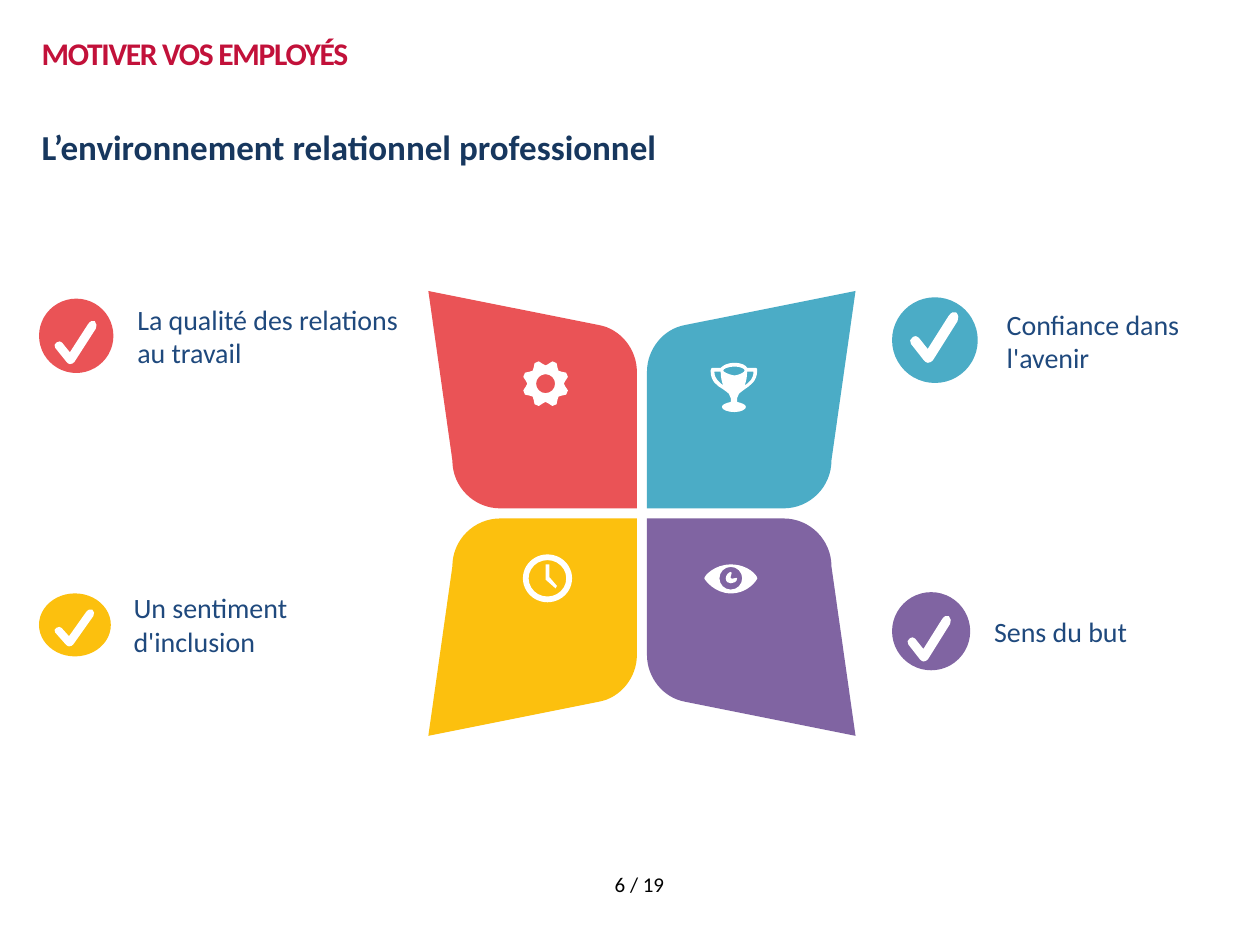
from math import cos, radians, sin

from lxml.etree import SubElement
from pptx import Presentation
from pptx.dml.color import RGBColor
from pptx.enum.shapes import MSO_SHAPE
from pptx.enum.text import MSO_ANCHOR, MSO_AUTO_SIZE, PP_ALIGN
from pptx.oxml.ns import qn
from pptx.util import Inches, Pt

COLORS = {
    "red": "EA5356", "teal": "4BACC6", "gold": "FCC00E", "plum": "8064A2",
    "white": "FFFFFF", "black": "000000", "navy": "17375E", "blue": "1F497D",
    "title": "C2113A",
}

# Outlines: a pair is a corner, six numbers are a Bezier curve
PETAL = [[(30, 145), (165, 172), (146, 38), (146, 17, 129, 0, 108, 0), (0, 0),
          (0, 108), (0, 126, 13, 142, 30, 145)]]
CHECK = [[(14, 41), (13, 41, 12, 40, 11, 39), (1, 26), (0, 24, 0, 22, 2, 21),
          (4, 19, 6, 20, 7, 21), (14, 30), (30, 4), (32, 1, 34, 0, 36, 1),
          (38, 3, 38, 6, 37, 8), (18, 39), (17, 40, 16, 41, 14, 41)]]
CUP = [
    [(21, 28), (21, 25, 23, 24, 27, 21), (31, 18, 37, 15, 37, 6),
     (37, 5, 37, 4, 36, 4), (29, 4), (28, 2, 25, 0, 19, 0),
     (13, 0, 10, 2, 8, 4), (1, 4), (1, 4, 0, 5, 0, 6),
     (0, 15, 5, 18, 10, 21), (14, 24, 16, 25, 16, 28), (16, 31),
     (12, 32, 9, 33, 9, 35), (9, 37, 13, 39, 19, 39),
     (24, 39, 28, 37, 28, 35), (28, 33, 25, 32, 21, 31)],
    [(27, 18), (28, 15, 29, 12, 29, 7), (34, 7), (34, 13, 31, 15, 27, 18)],
    [(19, 3), (25, 3, 27, 5, 27, 6), (27, 7, 25, 9, 19, 10),
     (13, 9, 10, 7, 10, 6), (10, 5, 13, 3, 19, 3)],
    [(3, 7), (8, 7), (8, 12, 9, 15, 10, 18), (7, 15, 3, 13, 3, 7)],
]
EYE = [
    [(21, 0), (8, 0, 0, 9, 0, 11), (0, 12, 8, 23, 21, 23),
     (35, 23, 42, 12, 42, 11), (42, 9, 35, 0, 21, 0)],
    [(21, 20), (16, 20, 12, 16, 12, 11), (12, 6, 16, 2, 21, 2),
     (26, 2, 30, 6, 30, 11), (30, 16, 26, 20, 21, 20)],
    [(21, 11), (20, 10, 23, 6, 21, 6), (19, 6, 17, 9, 17, 11),
     (17, 14, 19, 15, 21, 15), (23, 15, 26, 14, 26, 11),
     (26, 10, 22, 12, 21, 11)],
]
HANDS = [[(3, 0), (0, 0), (0, 12), (8, 19), (9, 17), (3, 10)]]


def polar(start, *pairs):
    """One node of the gear, from pairs of angle and radius."""
    node = []
    for angle, reach in pairs:
        turn = radians(start + angle)
        node += [18 + reach * cos(turn), 17.5 + reach * sin(turn)]
    return tuple(node)


TOOTH = [[(6, 15), (10, 16.5), (17, 18.5)], [(28, 18.5)],
         [(35, 16.5), (39, 15), (45, 14.5)]]
GEAR = [
    [polar(0, (0, 14.5))] + [polar(a, *node) for a in range(0, 360, 45) for node in TOOTH],
    [polar(0, (0, 7.5))] + [polar(a, (28.9, 8.57), (61.1, 8.57), (90, 7.5))
                            for a in range(0, 360, 90)],
]


def color(name):
    return RGBColor.from_string(COLORS[name])


def paint(shape, fill):
    shape.shadow.inherit = False
    shape.fill.solid()
    shape.fill.fore_color.rgb = color(fill)
    shape.line.fill.background()
    return shape


def preset(slide, kind, box, fill):
    return paint(slide.shapes.add_shape(kind, *map(Inches, box)), fill)


def free(slide, box, parts, fill, grid=None):
    """Draw outlines in a box; grid is their size, by default in 1/100 inch."""
    left, top, wide, high = box
    cols, rows = grid or (wide * 100, high * 100)
    pen, nodes = None, []
    for part in parts:
        spots = [[(Inches(left + x * wide / cols), Inches(top + y * high / rows))
                  for x, y in zip(node[::2], node[1::2])] for node in part]
        ends = [spot[-1] for spot in spots]
        if pen is None:
            pen = slide.shapes.build_freeform(*ends[0], scale=1.0)
        else:
            pen.move_to(*ends[0])
        pen.add_line_segments(ends[1:], close=False)
        nodes += spots
    shape = paint(pen.convert_to_shape(), fill)
    # Bend the segments that are curves
    steps = [step for step in shape._element.iter(qn("a:moveTo"), qn("a:lnTo"))]
    for step, spots in zip(steps, nodes):
        if len(spots) == 3:
            step.tag = qn("a:cubicBezTo")
            for old in list(step):
                step.remove(old)
            for x, y in spots:
                SubElement(step, qn("a:pt"), x=str(x - shape.left), y=str(y - shape.top))
    return shape


def write(shape, text, size=16, fill="blue", bold=False, align=PP_ALIGN.LEFT,
          inset=(0.09, 0.05), lead=None, track=None):
    frame = shape.text_frame
    frame.word_wrap = True
    frame.auto_size = MSO_AUTO_SIZE.SHAPE_TO_FIT_TEXT
    frame.vertical_anchor = MSO_ANCHOR.TOP
    frame.margin_left = frame.margin_right = Inches(inset[0])
    frame.margin_top = frame.margin_bottom = Inches(inset[1])
    para = frame.paragraphs[0]
    para.alignment = align
    if lead:
        para.line_spacing = Pt(lead)
    run = para.add_run()
    run.text = text
    font = run.font
    font.name, font.size, font.bold = "Calibri", Pt(size), bold
    font.color.rgb = color(fill)
    if track:
        run._r.get_or_add_rPr().set("spc", str(int(track * 100)))


def label(slide, box, text, **style):
    write(slide.shapes.add_textbox(*map(Inches, box)), text, **style)


def banner(slide, box, text, **style):
    shape = preset(slide, MSO_SHAPE.RECTANGLE, box, "white")
    write(shape, text, bold=True, align=PP_ALIGN.JUSTIFY, inset=(0, 0), lead=20, **style)


def flower(slide, box):
    """Four mirrored petals around the centre, with an icon on each."""
    left, top, wide, high = box
    midx, midy, gap = left + wide / 2, top + high / 2, 0.04
    for sx, sy, fill in [(-1, -1, "red"), (1, -1, "teal"),
                         (1, 1, "plum"), (-1, 1, "gold")]:
        spot = (midx + sx * gap, midy + sy * gap,
                sx * (wide / 2 - gap), sy * (high / 2 - gap))
        free(slide, spot, PETAL, fill, (165, 172))
    for x, y, w, h, icon in [(2.19, 2.17, 0.42, 0.24, EYE),
                             (2.24, 0.57, 0.38, 0.39, CUP),
                             (0.93, 2.17, 0.09, 0.18, HANDS),
                             (0.75, 0.56, 0.36, 0.35, GEAR)]:
        free(slide, (left + x, top + y, w, h), icon, "white")
    ring = preset(slide, MSO_SHAPE.DONUT, (left + 0.75, top + 2.09, 0.39, 0.38), "white")
    ring.adjustments[0] = 0.12


def point(slide, disc, tick, spot, text, fill):
    """Ticked disc with its wording."""
    label(slide, spot, text)
    preset(slide, MSO_SHAPE.OVAL, disc, fill)
    free(slide, tick, CHECK, "white", (38, 41))


def main():
    deck = Presentation()
    deck.slide_width, deck.slide_height = Inches(10), Inches(7.5)
    slide = deck.slides.add_slide(deck.slide_layouts[6])

    # Headings
    banner(slide, (0.33, 1.05, 9.33, 0.28), "L’environnement relationnel professionnel",
           size=20, fill="navy")
    banner(slide, (0.33, 0.29, 9.33, 0.76), "MOTIVER VOS EMPLOYÉS",
           size=18, fill="title", track=-0.75)

    # Centre and the four points
    flower(slide, (3.4, 2.31, 3.39, 3.53))
    point(slide, (0.31, 2.37, 0.59, 0.59), (0.43, 2.54, 0.34, 0.35),
          (1, 2.35, 2.37, 0.63), "La qualité des relations au travail", "red")
    point(slide, (7.08, 2.36, 0.68, 0.68), (7.22, 2.47, 0.39, 0.41),
          (7.9, 2.39, 1.76, 0.63), "Confiance dans l'avenir", "teal")
    point(slide, (0.31, 4.71, 0.57, 0.5), (0.43, 4.83, 0.32, 0.3),
          (0.97, 4.64, 2.1, 0.63), "Un sentiment d'inclusion", "gold")
    point(slide, (7.08, 4.7, 0.62, 0.62), (7.2, 4.88, 0.35, 0.37),
          (7.8, 4.83, 1.86, 0.36), "Sens du but", "plum")

    # Page number
    label(slide, (4.38, 6.87, 1.39, 0.31), "6 / 19", size=12, fill="black",
          align=PP_ALIGN.CENTER)
    deck.save("out.pptx")


if __name__ == "__main__":
    main()
